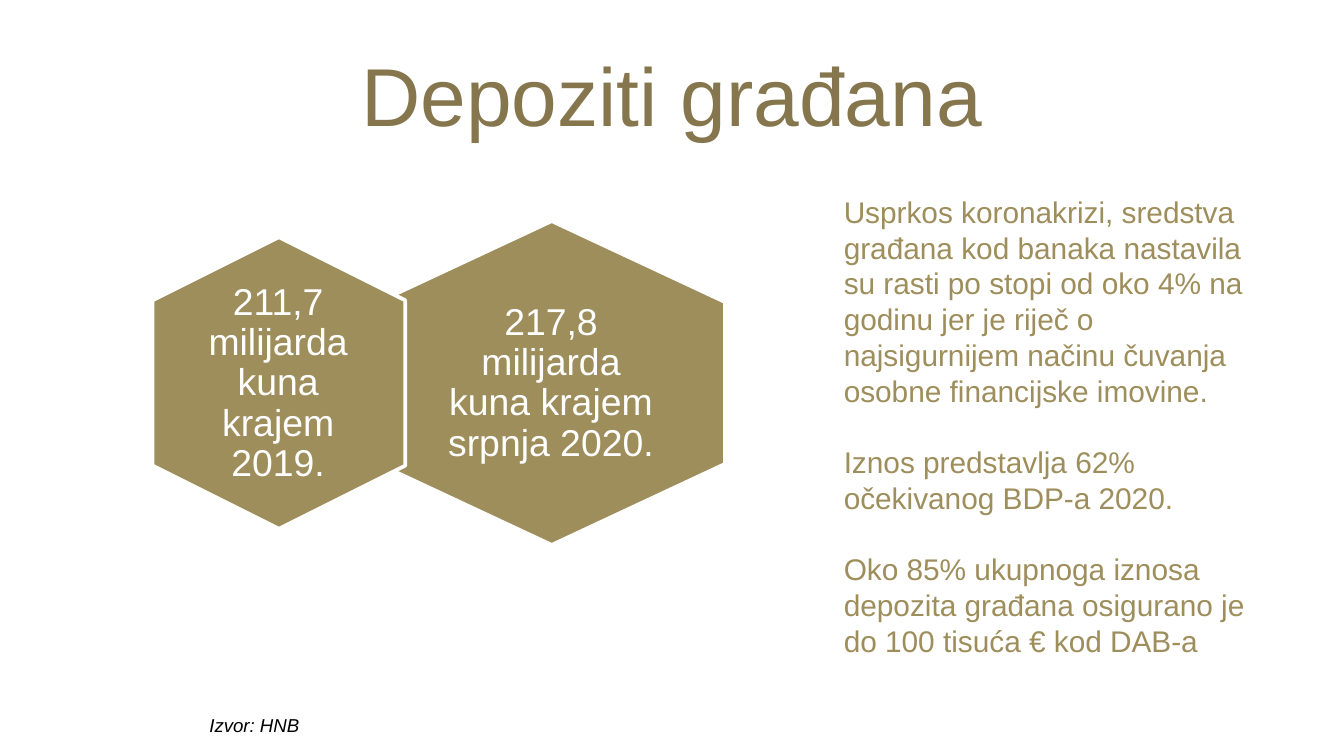
from pptx import Presentation
from pptx.dml.color import RGBColor
from pptx.enum.shapes import MSO_SHAPE as Shape
from pptx.enum.text import MSO_ANCHOR as Anchor, PP_ALIGN as Align
from pptx.util import Inches, Pt

COLORS = {"title": "85764D", "gold": "9E8E5C", "white": "FFFFFF", "black": "000000"}
TITLE = "Depoziti građana"
SOURCE = "Izvor: HNB"
NOTES = [
    "Usprkos koronakrizi, sredstva građana kod banaka nastavila su rasti po stopi "
    "od oko 4% na godinu jer je riječ o najsigurnijem načinu čuvanja osobne "
    "financijske imovine.",
    "Iznos predstavlja 62% očekivanog BDP-a 2020.",
    "Oko 85% ukupnoga iznosa depozita građana osigurano je do 100 tisuća € kod DAB-a",
]
# text, hexagon frame before rotation, text frame, text inset; back to front
HEXES = [
    ("217,8 milijarda kuna krajem srpnja 2020.",
     (2.9, 1.56, 2.41, 2.58), (3.24, 2.05, 1.72, 1.61), 0.08),
    ("211,7 milijarda kuna krajem 2019.",
     (0.99, 1.91, 2.17, 1.88), (1.42, 2.11, 1.3, 1.49), 0),
]


def color(name):
    return RGBColor.from_string(COLORS[name])


def add_text(shapes, box, lines, size, tone, align=Align.LEFT, anchor=Anchor.TOP,
             gap=0, italic=False):
    """Add a wrapped text box; gap is the space in points between paragraphs."""
    frame = shapes.add_textbox(*map(Inches, box)).text_frame
    frame.word_wrap = True
    frame.vertical_anchor = anchor
    frame.text = "\n".join(lines)
    for i, para in enumerate(frame.paragraphs):
        para.alignment = align
        if i and gap:
            para.space_before = Pt(gap)
        for run in para.runs:
            font = run.font
            font.name, font.size, font.italic = "Arial", Pt(size), italic
            font.color.rgb = color(tone)
    return frame


def add_hex(shapes, text, box, text_box, inset):
    hexagon = shapes.add_shape(Shape.HEXAGON, *map(Inches, box))
    hexagon.rotation = 90
    hexagon.shadow.inherit = False
    hexagon.fill.solid()
    hexagon.fill.fore_color.rgb = color("gold")
    hexagon.line.color.rgb = color("white")
    hexagon.line.width = Pt(2)
    frame = add_text(shapes, text_box, [text], 20, "white", Align.CENTER, Anchor.MIDDLE)
    frame.margin_left = frame.margin_right = Inches(inset)
    frame.margin_top = frame.margin_bottom = Inches(inset)
    frame.paragraphs[0].line_spacing = 0.9


deck = Presentation()
deck.slide_width = Inches(10)
deck.slide_height = deck.slide_width * 9 // 16
slide = deck.slides.add_slide(deck.slide_layouts[6])

add_text(slide.shapes, (0.5, 0.23, 9, 0.94), [TITLE], 44, "title",
         Align.CENTER, Anchor.MIDDLE)
group = slide.shapes.add_group_shape()
for item in HEXES:
    add_hex(group.shapes, *item)
add_text(slide.shapes, (6.18, 1.39, 3.4, 3.6), NOTES, 16, "gold", gap=19)
add_text(slide.shapes, (1.46, 5.26, 0.94, 0.27), [SOURCE], 10, "black", italic=True)

deck.save("out.pptx")
